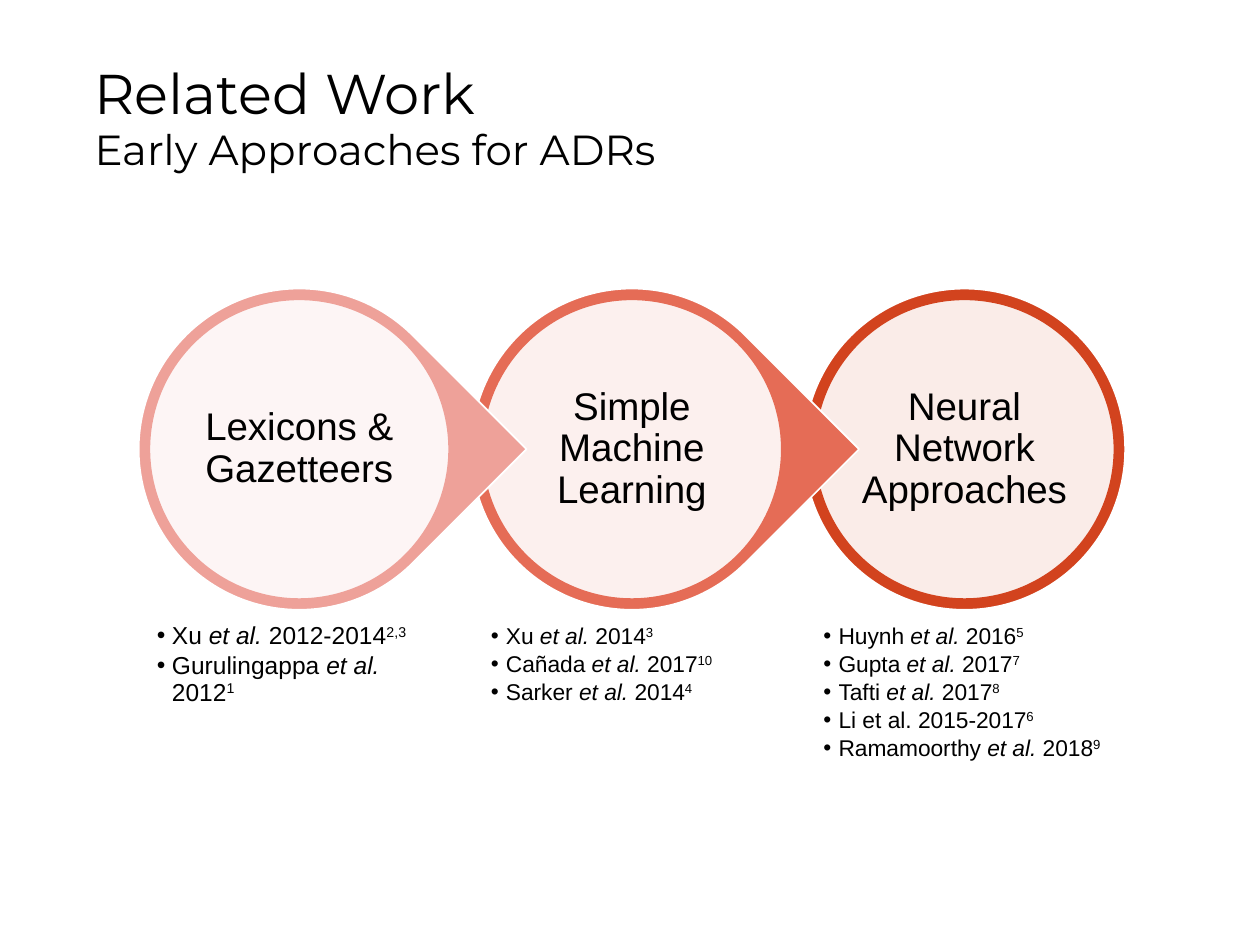
from lxml.etree import SubElement
from pptx import Presentation
from pptx.dml.color import RGBColor
from pptx.enum.shapes import MSO_SHAPE
from pptx.enum.text import MSO_ANCHOR, MSO_AUTO_SIZE, PP_ALIGN
from pptx.oxml.ns import qn
from pptx.util import Inches, Pt

TITLE, TOPIC = "Related Work", "Early Approaches for ADRs"
STAGES = [
    ("Lexicons & Gazetteers", "EEA199", 14, 0.06, [
        ("Xu ", "et al. ", "2012-2014", "2,3"),
        ("Gurulingappa ", "et al. ", "2012", "1"),
    ]),
    ("Simple Machine Learning", "E56C56", 13, 0.07, [
        ("Xu ", "et al. ", "2014", "3"),
        ("Cañada ", "et al. ", "2017", "10"),
        ("Sarker ", "et al.", " 2014", "4"),
    ]),
    ("Neural Network Approaches", "D2431E", 13, 0.07, [
        ("Huynh ", "et al.", " 2016", "5"),
        ("Gupta ", "et al.", " 2017", "7"),
        ("Tafti ", "et al. ", "2017", "8"),
        ("Li et al. 2015-2017", "", "", "6"),
        ("Ramamoorthy ", "et al. ", "2018", "9"),
    ]),
]
LEFT, TOP, STEP = 1.1, 2.29, 2.64
RING, DISC, LABEL = 2.55, 2.38, 1.7


def color(code):
    return RGBColor.from_string(code)


def write(para, text, size=13, face="Arial", italic=False, sup=False):
    run = para.add_run()
    run.text = text
    font = run.font
    font.size, font.name = Pt(size), face
    font.bold, font.italic = False, italic
    font.color.rgb = color("000000")
    if sup:
        run._r.get_or_add_rPr().set("baseline", "30000")


def setup(frame, inset, anchor=MSO_ANCHOR.TOP):
    frame.word_wrap = True
    frame.auto_size = MSO_AUTO_SIZE.NONE
    frame.vertical_anchor = anchor
    frame.margin_left = frame.margin_right = Inches(inset)
    frame.margin_top = frame.margin_bottom = Inches(inset)


def space(para, line, after=0, align=PP_ALIGN.LEFT):
    para.line_spacing, para.alignment = line, align
    para.space_before, para.space_after = Pt(0), Pt(after)


def place(shape, x, y, w, h):
    shape.left, shape.top = Inches(x), Inches(y)
    shape.width, shape.height = Inches(w), Inches(h)


def bullet(para):
    props = para._p.get_or_add_pPr()
    props.set("marL", str(Inches(0.12)))
    props.set("indent", str(-Inches(0.12)))
    SubElement(props, qn("a:buFont"), typeface="Arial")
    SubElement(props, qn("a:buChar"), char="•")


def draw(kind, x, y, size, fill, line):
    shape = slide.shapes.add_shape(kind, Inches(x), Inches(y), Inches(size), Inches(size))
    shape.shadow.inherit = False
    shape.fill.solid()
    shape.fill.fore_color.rgb = color(fill)
    shape.line.color.rgb = color(line)
    shape.line.width = Pt(1)
    return shape


def add_ring(x, tint, last):
    kind = MSO_SHAPE.OVAL if last else MSO_SHAPE.TEAR
    ring = draw(kind, x, TOP, RING, tint, "FFFFFF")
    ring.rotation = 0 if last else 45
    gap = (RING - DISC) / 2
    disc = draw(MSO_SHAPE.OVAL, x + gap, TOP + gap, DISC, "FFFFFF", tint)
    fill = disc.fill._xPr.find(qn("a:solidFill"))
    SubElement(fill[0], qn("a:alpha"), val="90000")


def add_label(x, text):
    gap = (RING - LABEL) / 2
    box = slide.shapes.add_textbox(
        Inches(x + gap), Inches(TOP + gap), Inches(LABEL), Inches(LABEL))
    setup(box.text_frame, 0.03, MSO_ANCHOR.MIDDLE)
    para = box.text_frame.paragraphs[0]
    space(para, 0.9, align=PP_ALIGN.CENTER)
    write(para, text, size=22)


def fill_list(body, x, size, inset, works):
    place(body, x + (RING - DISC) / 2, 4.89, DISC, 1.4)
    frame = body.text_frame
    setup(frame, inset)
    for row, (name, etal, year, ref) in enumerate(works):
        para = frame.add_paragraph() if row else frame.paragraphs[0]
        bullet(para)
        space(para, 0.9, after=1.9)
        for text, style in ((name, {}), (etal, {"italic": True}), (year, {}), (ref, {"sup": True})):
            if text:
                write(para, text, size=size, **style)


deck = Presentation()
deck.slide_width, deck.slide_height = Inches(10), Inches(7.5)
slide = deck.slides.add_slide(deck.slide_layouts[4])
title, *bodies = slide.placeholders
spare = bodies.pop().element
spare.getparent().remove(spare)

place(title, 0.75, 0.5, 8.5, 1.05)
setup(title.text_frame, 0)
head = title.text_frame.paragraphs[0]
space(head, 0.95)
write(head, TITLE, size=32, face="Montserrat")
head.add_line_break()
SubElement(head._p[-1], qn("a:rPr"), sz="3200")
write(head, TOPIC, size=24, face="Montserrat")

for col in reversed(range(len(STAGES))):
    label, tint, size, inset, works = STAGES[col]
    x = LEFT + col * STEP
    add_ring(x, tint, col == len(STAGES) - 1)
    add_label(x, label)
    fill_list(bodies[col], x, size, inset, works)

deck.save("out.pptx")
